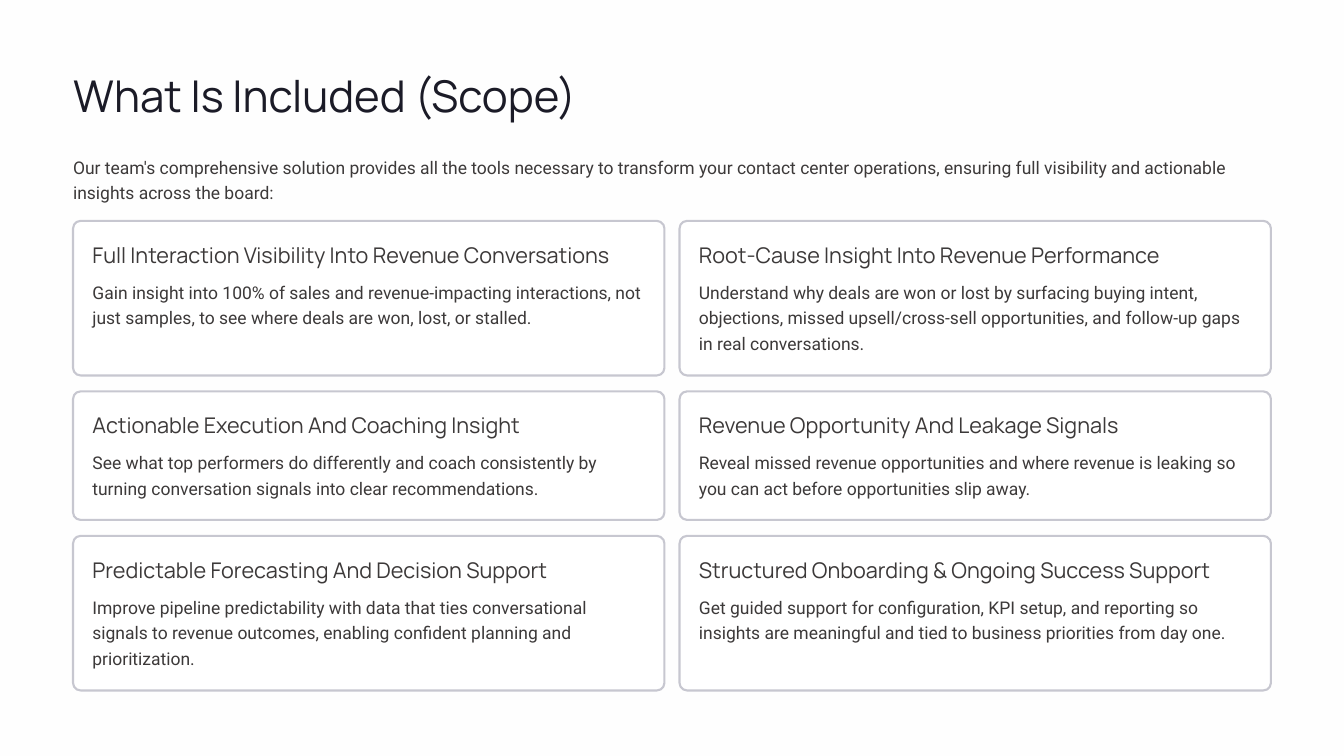
from dataclasses import dataclass

from pptx import Presentation
from pptx.dml.color import RGBColor
from pptx.enum.shapes import MSO_SHAPE
from pptx.util import Inches, Pt

ROUNDED = MSO_SHAPE.ROUNDED_RECTANGLE


@dataclass(frozen=True)
class Theme:
    background: str = "FEFEFE"
    card: str = "FFFFFF"
    border: str = "C7C7D0"
    title: str = "1B1B27"
    text: str = "3C3939"
    heading_font: str = "Manrope"
    body_font: str = "Roboto"
    title_size: float = 37.5
    heading_size: float = 18.5
    body_size: float = 15
    title_spacing: float = 47
    heading_spacing: float = 23.5
    body_spacing: float = 22
    border_width: float = 1.8


THEME = Theme()
LEFT = 0.87
CARD_TOP = 2.63
CARD_WIDTH = 7.04
COLUMN_GAP = 0.18
ROW_GAP = 0.19
PADDING = 0.23
BODY_OFFSET = 0.67
RADIUS = 0.09

INTRO = (
    "Our team's comprehensive solution provides all the tools necessary to transform your "
    "contact center operations, ensuring full visibility and actionable insights across the board:"
)

ROWS = [
    (1.84, [
        ("Full Interaction Visibility Into Revenue Conversations",
         "Gain insight into 100% of sales and revenue-impacting interactions, not just samples, "
         "to see where deals are won, lost, or stalled."),
        ("Root-Cause Insight Into Revenue Performance",
         "Understand why deals are won or lost by surfacing buying intent, objections, missed "
         "upsell/cross-sell opportunities, and follow-up gaps in real conversations."),
    ]),
    (1.53, [
        ("Actionable Execution And Coaching Insight",
         "See what top performers do differently and coach consistently by turning conversation "
         "signals into clear recommendations."),
        ("Revenue Opportunity And Leakage Signals",
         "Reveal missed revenue opportunities and where revenue is leaking so you can act before "
         "opportunities slip away."),
    ]),
    (1.84, [
        ("Predictable Forecasting And Decision Support",
         "Improve pipeline predictability with data that ties conversational signals to revenue "
         "outcomes, enabling confident planning and prioritization."),
        ("Structured Onboarding & Ongoing Success Support",
         "Get guided support for configuration, KPI setup, and reporting so insights are "
         "meaningful and tied to business priorities from day one."),
    ]),
]


def write_text(frame, text, *, font, size, color, spacing, wrap=True):
    frame.margin_left = frame.margin_right = 0
    frame.margin_top = frame.margin_bottom = 0
    frame.word_wrap = wrap
    paragraph = frame.paragraphs[0]
    paragraph.line_spacing = Pt(spacing)
    run = paragraph.add_run()
    run.text = text
    run.font.name = font
    run.font.size = Pt(size)
    run.font.color.rgb = RGBColor.from_string(color)


class SlideBuilder:
    def __init__(self, slide, theme):
        self.slide = slide
        self.theme = theme

    def background(self):
        fill = self.slide.background.fill
        fill.solid()
        fill.fore_color.rgb = RGBColor.from_string(self.theme.background)

    def text(self, text, left, top, width, height, **style):
        box = self.slide.shapes.add_textbox(
            Inches(left), Inches(top), Inches(width), Inches(height))
        write_text(box.text_frame, text, **style)

    def title(self, text, left, top, width, height):
        theme = self.theme
        self.text(text, left, top, width, height, font=theme.heading_font,
                  size=theme.title_size, color=theme.title,
                  spacing=theme.title_spacing, wrap=False)

    def heading(self, text, left, top, width, height):
        theme = self.theme
        self.text(text, left, top, width, height, font=theme.heading_font,
                  size=theme.heading_size, color=theme.text,
                  spacing=theme.heading_spacing, wrap=False)

    def body(self, text, left, top, width, height):
        theme = self.theme
        self.text(text, left, top, width, height, font=theme.body_font,
                  size=theme.body_size, color=theme.text, spacing=theme.body_spacing)

    def panel(self, left, top, width, height):
        shape = self.slide.shapes.add_shape(
            ROUNDED, Inches(left), Inches(top), Inches(width), Inches(height))
        shape.shadow.inherit = False
        shape.adjustments[0] = RADIUS / height
        shape.fill.solid()
        shape.fill.fore_color.rgb = RGBColor.from_string(self.theme.card)
        shape.line.color.rgb = RGBColor.from_string(self.theme.border)
        shape.line.width = Pt(self.theme.border_width)

    def card(self, heading, body, left, top, height):
        self.panel(left, top, CARD_WIDTH, height)
        text_left = left + PADDING
        text_width = CARD_WIDTH - 2 * PADDING
        self.heading(heading, text_left, top + PADDING, text_width, 0.33)
        self.body(body, text_left, top + BODY_OFFSET, text_width,
                  height - BODY_OFFSET - PADDING)


def main():
    presentation = Presentation()
    presentation.slide_width = Inches(16)
    presentation.slide_height = Inches(9)
    slide = presentation.slides.add_slide(presentation.slide_layouts[6])
    builder = SlideBuilder(slide, THEME)
    builder.background()
    builder.title("What Is Included (Scope)", LEFT, 0.79, 6.08, 0.66)
    builder.body(INTRO, LEFT, 1.81, 2 * CARD_WIDTH + COLUMN_GAP, 0.62)
    top = CARD_TOP
    for height, cards in ROWS:
        for column, (heading, body) in enumerate(cards):
            left = LEFT + column * (CARD_WIDTH + COLUMN_GAP)
            builder.card(heading, body, left, top, height)
        top += height + ROW_GAP
    presentation.save("out.pptx")


if __name__ == "__main__":
    main()
